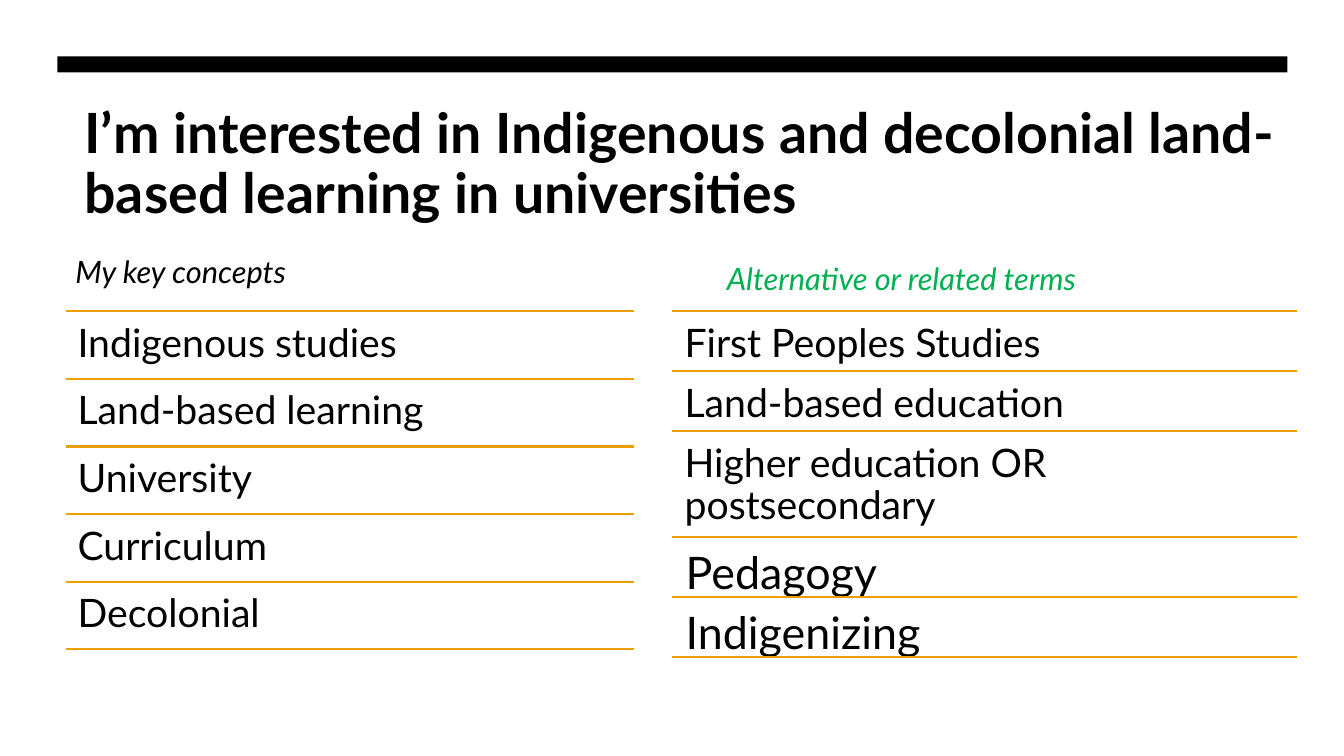
from lxml import etree
from pptx import Presentation
from pptx.dml.color import RGBColor
from pptx.enum.shapes import MSO_CONNECTOR, MSO_SHAPE
from pptx.enum.text import MSO_ANCHOR
from pptx.oxml.ns import qn
from pptx.util import Inches, Pt

BLACK = "000000"
GREEN = "00B050"
GOLD = "EBA000"


def color(value):
    return RGBColor.from_string(value)


def add_text(slide, text, box, size, ink=BLACK, bold=False, italic=False,
             spacing=0.9, anchor=MSO_ANCHOR.TOP, insets=(0.1, 0.05)):
    shape = slide.shapes.add_textbox(*[Inches(length) for length in box])
    frame = shape.text_frame
    frame.word_wrap = True
    frame.vertical_anchor = anchor
    frame.margin_left = frame.margin_right = Inches(insets[0])
    frame.margin_top = frame.margin_bottom = Inches(insets[1])
    frame.text = text
    paragraph = frame.paragraphs[0]
    paragraph.line_spacing = spacing
    font = paragraph.runs[0].font
    font.name = "Lato"
    font.size = Pt(size)
    font.bold = bold
    font.italic = italic
    font.color.rgb = color(ink)


def add_rule(slide, left, top, width):
    rule = slide.shapes.add_connector(
        MSO_CONNECTOR.STRAIGHT, Inches(left), Inches(top),
        Inches(left + width), Inches(top))
    rule.line.color.rgb = color(GOLD)
    rule.line.width = Pt(1.5)
    etree.SubElement(rule._element.spPr, qn("a:effectLst"))


def add_header(slide, left, top, width):
    bar = slide.shapes.add_shape(
        MSO_SHAPE.RECTANGLE, Inches(left), Inches(top), Inches(width), Inches(0.16))
    bar.shadow.inherit = False
    bar.fill.solid()
    bar.fill.fore_color.rgb = color(BLACK)
    bar.line.fill.background()
    add_text(slide,
             "I’m interested in Indigenous and decolonial land-based learning in universities",
             (left + 0.17, top + 0.44, width + 0.01, 1.33), 39.6, bold=True)


def add_heading(slide, text, left, top, ink):
    add_text(slide, text, (left, top, 5.65, 0.72), 22, ink, italic=True,
             spacing=1.1, anchor=MSO_ANCHOR.BOTTOM)


def add_term_list(slide, left, top, width, rows):
    for term, height, size, inset in rows:
        add_rule(slide, left, top, width)
        add_text(slide, term, (left, top, width, height), size, insets=(inset, inset))
        top += height
    add_rule(slide, left, top, width)


def main():
    presentation = Presentation()
    presentation.slide_width = Inches(13.33)
    presentation.slide_height = Inches(7.5)
    slide = presentation.slides.add_slide(presentation.slide_layouts[6])

    add_header(slide, 0.57, 0.56, 12.2)

    concepts = ["Indigenous studies", "Land-based learning", "University",
                "Curriculum", "Decolonial"]
    add_heading(slide, "My key concepts", 0.65, 2.2, BLACK)
    add_term_list(slide, 0.65, 3.09, 5.64,
                  [(concept, 0.67, 28, 0.12) for concept in concepts])

    related_terms = [
        ("First Peoples Studies", 0.595, 28, 0.12),
        ("Land-based education", 0.595, 28, 0.12),
        ("Higher education OR postsecondary", 1.05, 28, 0.12),
        ("Pedagogy", 0.595, 32, 0.13),
        ("Indigenizing", 0.595, 32, 0.13),
    ]
    add_heading(slide, "Alternative or related terms", 7.11, 2.27, GREEN)
    add_term_list(slide, 6.67, 3.09, 6.19, related_terms)

    presentation.save("out.pptx")


if __name__ == "__main__":
    main()
